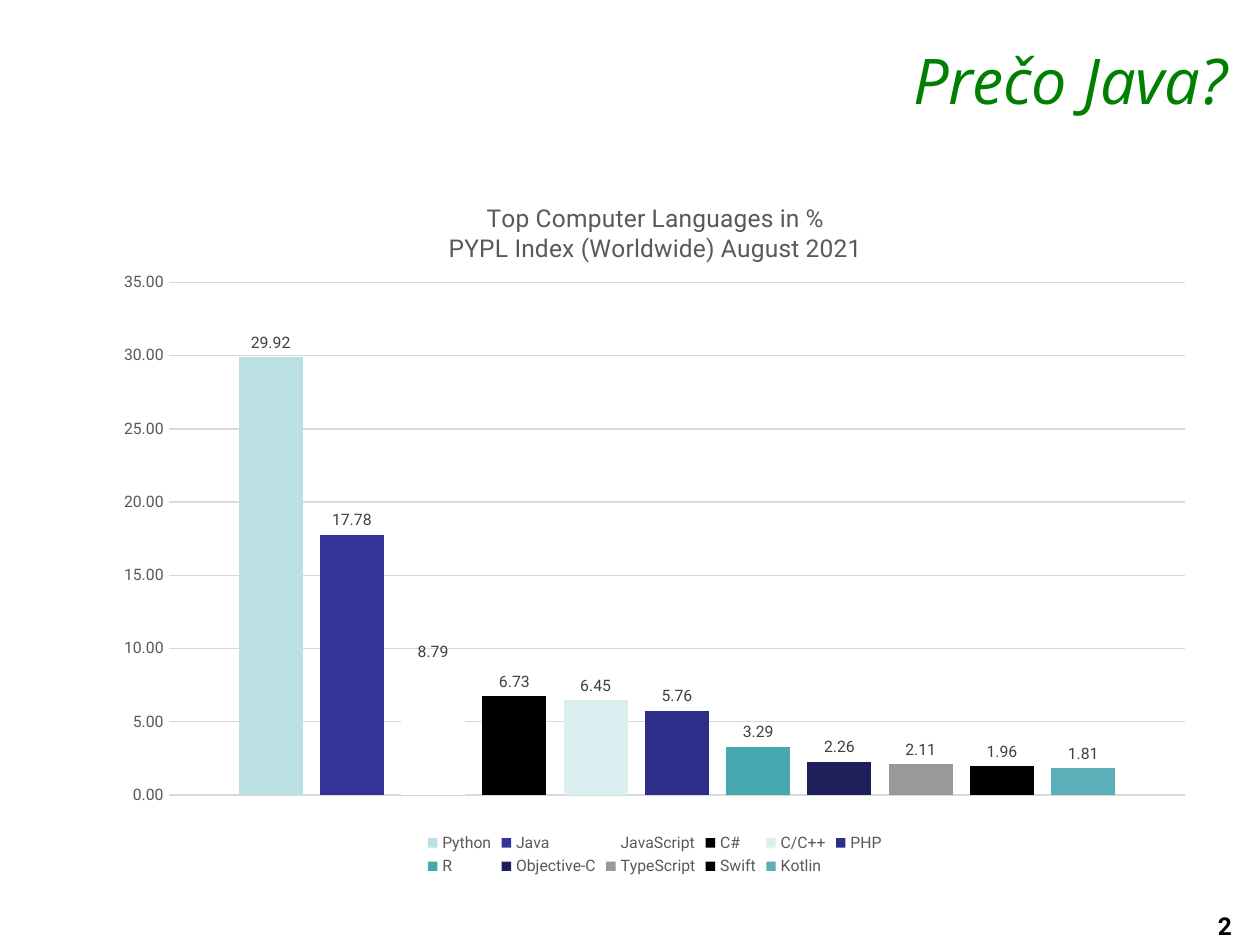
import lxml.etree
import pptx
import pptx.chart.data
import pptx.dml.color
import pptx.enum.chart
import pptx.enum.text
import pptx.oxml.ns
import pptx.util

Cm = pptx.util.Cm
Pt = pptx.util.Pt
RGBColor = pptx.dml.color.RGBColor
qn = pptx.oxml.ns.qn

BLACK = RGBColor(0x00, 0x00, 0x00)
WHITE = RGBColor(0xFF, 0xFF, 0xFF)
GREEN = RGBColor(0x00, 0x80, 0x00)
AXIS_GRAY = RGBColor(0x59, 0x59, 0x59)
LABEL_GRAY = RGBColor(0x40, 0x40, 0x40)
GRID_GRAY = RGBColor(0xD9, 0xD9, 0xD9)

LANGUAGES = [
    ("Python", 29.92, RGBColor(0xBB, 0xE0, 0xE3)),
    ("Java", 17.78, RGBColor(0x33, 0x33, 0x99)),
    ("JavaScript", 8.79, WHITE),
    ("C#", 6.73, BLACK),
    ("C/C++", 6.45, RGBColor(0xDA, 0xED, 0xEF)),
    ("PHP", 5.76, RGBColor(0x2D, 0x2D, 0x8A)),
    ("R", 3.29, RGBColor(0x48, 0xA8, 0xB0)),
    ("Objective-C", 2.26, RGBColor(0x1F, 0x1F, 0x5C)),
    ("TypeScript", 2.11, RGBColor(0x99, 0x99, 0x99)),
    ("Swift", 1.96, BLACK),
    ("Kotlin", 1.81, RGBColor(0x5A, 0xAF, 0xB8)),
]
CHART_TITLE = ["Top Computer Languages in %", "PYPL Index (Worldwide) August 2021"]
NUMBER_FORMAT = "0.00"


def set_attributes(target, values):
    for name, value in values.items():
        setattr(target, name, value)


def format_font(font, color, **values):
    set_attributes(font, values)
    font.color.rgb = color


def add_title(slide, left, top, width, height):
    title = slide.shapes.title
    set_attributes(title, dict(left=left, top=top, width=width, height=height))
    frame = title.text_frame
    set_attributes(frame, dict(
        text="Prečo Java?", margin_top=Cm(0.05), word_wrap=True,
        auto_size=pptx.enum.text.MSO_AUTO_SIZE.NONE,
        vertical_anchor=pptx.enum.text.MSO_ANCHOR.TOP))
    paragraph = frame.paragraphs[0]
    paragraph.alignment = pptx.enum.text.PP_ALIGN.RIGHT
    format_font(paragraph.runs[0].font, GREEN, name="Open Sans", size=Pt(36), italic=True)


def add_slide_number(slide, left, top, width, height):
    frame = slide.shapes.add_textbox(left, top, width, height).text_frame
    frame.text = "2"
    format_font(frame.paragraphs[0].runs[0].font, BLACK, name="Roboto", size=Pt(14), bold=True)


def set_layout(part, index, **positions):
    """Fix a chart part at fractions of the chart area; index is the layout's place in it."""
    for old_layout in part.findall(qn("c:layout")):
        part.remove(old_layout)
    layout = lxml.etree.Element(qn("c:layout"))
    part.insert(index, layout)
    manual = lxml.etree.SubElement(layout, qn("c:manualLayout"))
    if "w" in positions:
        lxml.etree.SubElement(manual, qn("c:layoutTarget")).set("val", "inner")
    for name in ("x", "y"):
        lxml.etree.SubElement(manual, qn(f"c:{name}Mode")).set("val", "edge")
    for name, value in positions.items():
        lxml.etree.SubElement(manual, qn(f"c:{name}")).set("val", str(value))


def add_chart_title(chart):
    title = chart.chart_title
    frame = title.text_frame
    frame.text = "\n".join(CHART_TITLE)
    for paragraph in frame.paragraphs:
        format_font(paragraph.runs[0].font, AXIS_GRAY, name="Roboto", size=Pt(14), bold=False)
    set_layout(title._element, 1, x=0.31, y=0.04)


def format_axes(chart):
    chart.category_axis.visible = False
    axis = chart.value_axis
    set_attributes(axis, dict(
        minimum_scale=0, maximum_scale=35, major_unit=5, has_major_gridlines=True,
        major_tick_mark=pptx.enum.chart.XL_TICK_MARK.NONE))
    set_attributes(axis.tick_labels, dict(
        number_format=NUMBER_FORMAT, number_format_is_linked=False))
    format_font(axis.tick_labels.font, AXIS_GRAY, name="Roboto", size=Pt(9))
    axis.format.line.fill.background()
    grid_line = axis.major_gridlines.format.line
    grid_line.color.rgb = GRID_GRAY
    grid_line.width = Pt(0.75)


def format_columns(plot):
    set_attributes(plot, dict(gap_width=219, overlap=-27, vary_by_categories=False))
    for series, (_, _, color) in zip(plot.series, LANGUAGES):
        series.format.fill.solid()
        series.format.fill.fore_color.rgb = color
        labels = series.data_labels
        set_attributes(labels, dict(
            show_value=True, number_format=NUMBER_FORMAT, number_format_is_linked=False,
            position=pptx.enum.chart.XL_LABEL_POSITION.OUTSIDE_END))
        format_font(labels.font, LABEL_GRAY, name="Roboto", size=Pt(9))


def add_language_chart(slide, left, top, width, height):
    data = pptx.chart.data.CategoryChartData(number_format=NUMBER_FORMAT)
    data.categories = ["1"]
    for name, share, _ in LANGUAGES:
        data.add_series(name, [share])
    chart = slide.shapes.add_chart(
        pptx.enum.chart.XL_CHART_TYPE.COLUMN_CLUSTERED, left, top, width, height, data).chart
    format_font(chart.font, BLACK, name="Roboto", size=Pt(10))
    add_chart_title(chart)
    format_axes(chart)
    format_columns(chart.plots[0])
    chart.has_legend = True
    set_attributes(chart.legend, dict(
        position=pptx.enum.chart.XL_LEGEND_POSITION.BOTTOM, include_in_layout=False))
    format_font(chart.legend.font, AXIS_GRAY, name="Roboto", size=Pt(9))
    set_layout(chart._chartSpace.chart.plotArea, 0, x=0.06, y=0.16, w=0.92, h=0.72)


def main():
    presentation = pptx.Presentation()
    set_attributes(presentation, dict(slide_width=Cm(25.4), slide_height=Cm(19.05)))
    slide = presentation.slides.add_slide(presentation.slide_layouts[5])
    slide.background.fill.solid()
    slide.background.fill.fore_color.rgb = WHITE
    add_slide_number(slide, Cm(24.3), Cm(18.24), Cm(1.3), Cm(0.84))
    add_title(slide, Cm(5.82), Cm(0.79), Cm(19.18), Cm(1.47))
    add_language_chart(slide, Cm(2.06), Cm(3.4), Cm(22.28), Cm(14.35))
    presentation.save("out.pptx")


if __name__ == "__main__":
    main()
